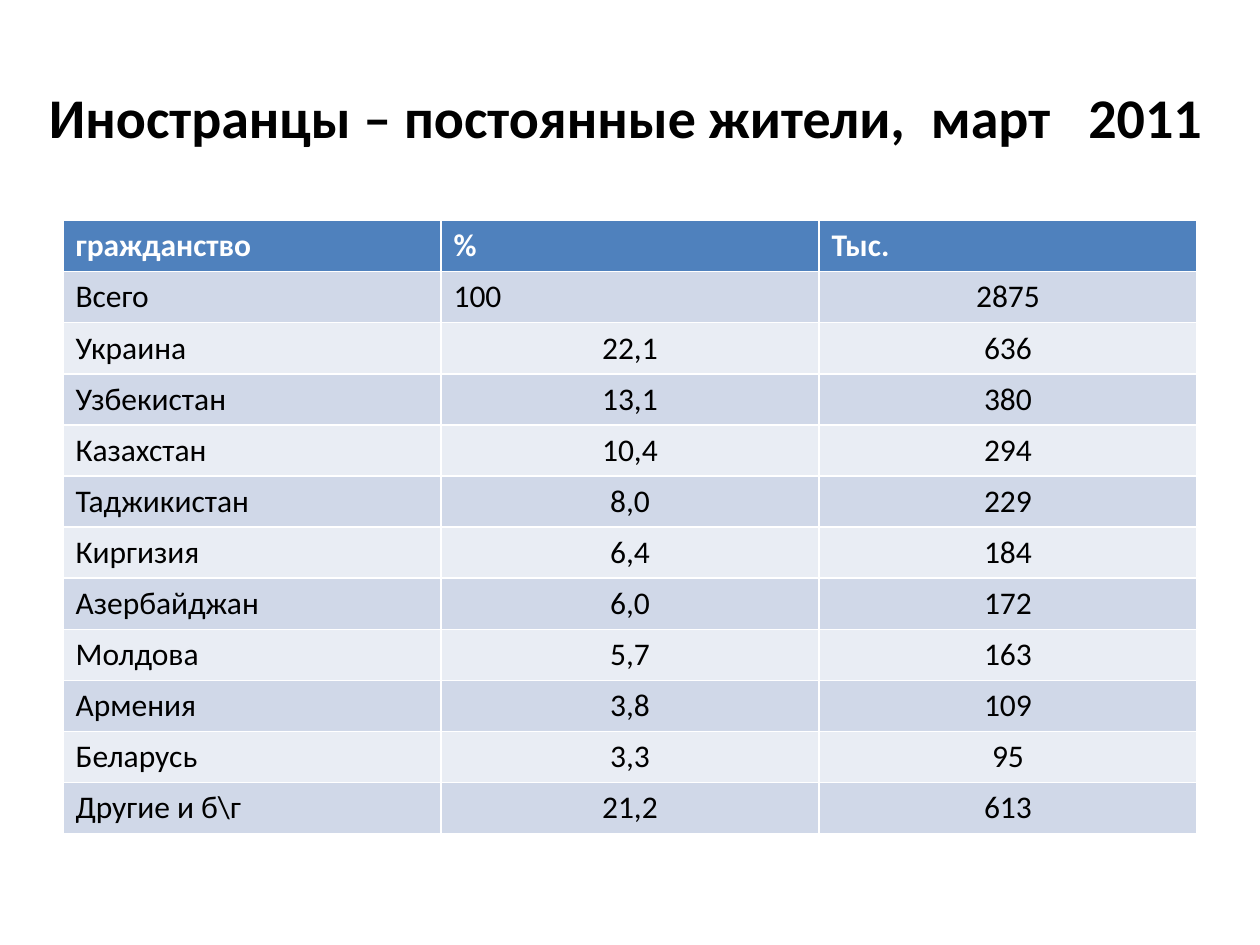
import dataclasses

import pptx
import pptx.dml.color
import pptx.enum.text
import pptx.util

ALIGN = pptx.enum.text.PP_ALIGN
ANCHOR = pptx.enum.text.MSO_ANCHOR
GRID_COLUMNS, GRID_ROWS = 20, 30

TITLE = "Иностранцы – постоянные жители, \tмарт   2011"
HEADINGS = ("гражданство", "%", "Тыс.")
RESIDENTS = (
    ("Всего", "100", "2875"),
    ("Украина", "22,1", "636"),
    ("Узбекистан", "13,1", "380"),
    ("Казахстан", "10,4", "294"),
    ("Таджикистан", "8,0", "229"),
    ("Киргизия", "6,4", "184"),
    ("Азербайджан", "6,0", "172"),
    ("Молдова", "5,7", "163"),
    ("Армения", "3,8", "109"),
    ("Беларусь", "3,3", "95"),
    ("Другие и б\\г", "21,2", "613"),
)


@dataclasses.dataclass(frozen=True)
class Theme:
    """Colours, font and type sizes of the slide."""
    font: str = "Calibri"
    title_size: int = 32
    table_size: int = 18
    ink: str = "000000"
    heading_ink: str = "FFFFFF"
    heading_fill: str = "4F81BD"
    bands: tuple = ("D0D8E8", "E9EDF4")


THEME = Theme()


def rgb(value):
    """Return the colour for a hexadecimal string."""
    return pptx.dml.color.RGBColor.from_string(value)


def grid_box(deck, column, row, columns, rows):
    """Turn grid columns and rows into left, top, width and height."""
    across = deck.slide_width / GRID_COLUMNS
    down = deck.slide_height / GRID_ROWS
    return (round(column * across), round(row * down),
            round(columns * across), round(rows * down))


def write_text(frame, text, *, size, color=THEME.ink, bold=False, align=ALIGN.LEFT):
    """Write one formatted paragraph into a text frame."""
    paragraph = frame.paragraphs[0]
    paragraph.alignment = align
    run = paragraph.add_run()
    run.text = text
    run.font.name = THEME.font
    run.font.size = pptx.util.Pt(size)
    run.font.bold = bold
    run.font.color.rgb = rgb(color)


def add_title(deck, slide):
    """Place and fill the title placeholder."""
    title = slide.shapes.title
    title.left, title.top, title.width, title.height = grid_box(deck, 0.4, 1.2, 19.06, 5)
    title.text_frame.vertical_anchor = ANCHOR.MIDDLE
    write_text(title.text_frame, TITLE, size=THEME.title_size, bold=True,
               align=ALIGN.CENTER)


def fill_cell(cell, text, fill, **text_format):
    """Colour a table cell and write its text."""
    cell.fill.solid()
    cell.fill.fore_color.rgb = rgb(fill)
    write_text(cell.text_frame, text, size=THEME.table_size, **text_format)


def add_residents_table(deck, slide):
    """Add the table of residents by citizenship."""
    box = grid_box(deck, 1, 7, 18, 19.47)
    table = slide.shapes.add_table(len(RESIDENTS) + 1, len(HEADINGS), *box).table
    for column, heading in enumerate(HEADINGS):
        fill_cell(table.cell(0, column), heading, THEME.heading_fill,
                  color=THEME.heading_ink, bold=True)
    for row, values in enumerate(RESIDENTS):
        band = THEME.bands[row % len(THEME.bands)]
        for column, value in enumerate(values):
            is_left = column == 0 or (row == 0 and column == 1)
            fill_cell(table.cell(row + 1, column), value, band,
                      align=ALIGN.LEFT if is_left else ALIGN.CENTER)


def main():
    """Build and save the slide."""
    deck = pptx.Presentation()
    deck.slide_width = pptx.util.Inches(10)
    deck.slide_height = pptx.util.Inches(7.5)
    slide = deck.slides.add_slide(deck.slide_layouts.get_by_name("Title Only"))
    add_title(deck, slide)
    add_residents_table(deck, slide)
    deck.save("out.pptx")


if __name__ == "__main__":
    main()
